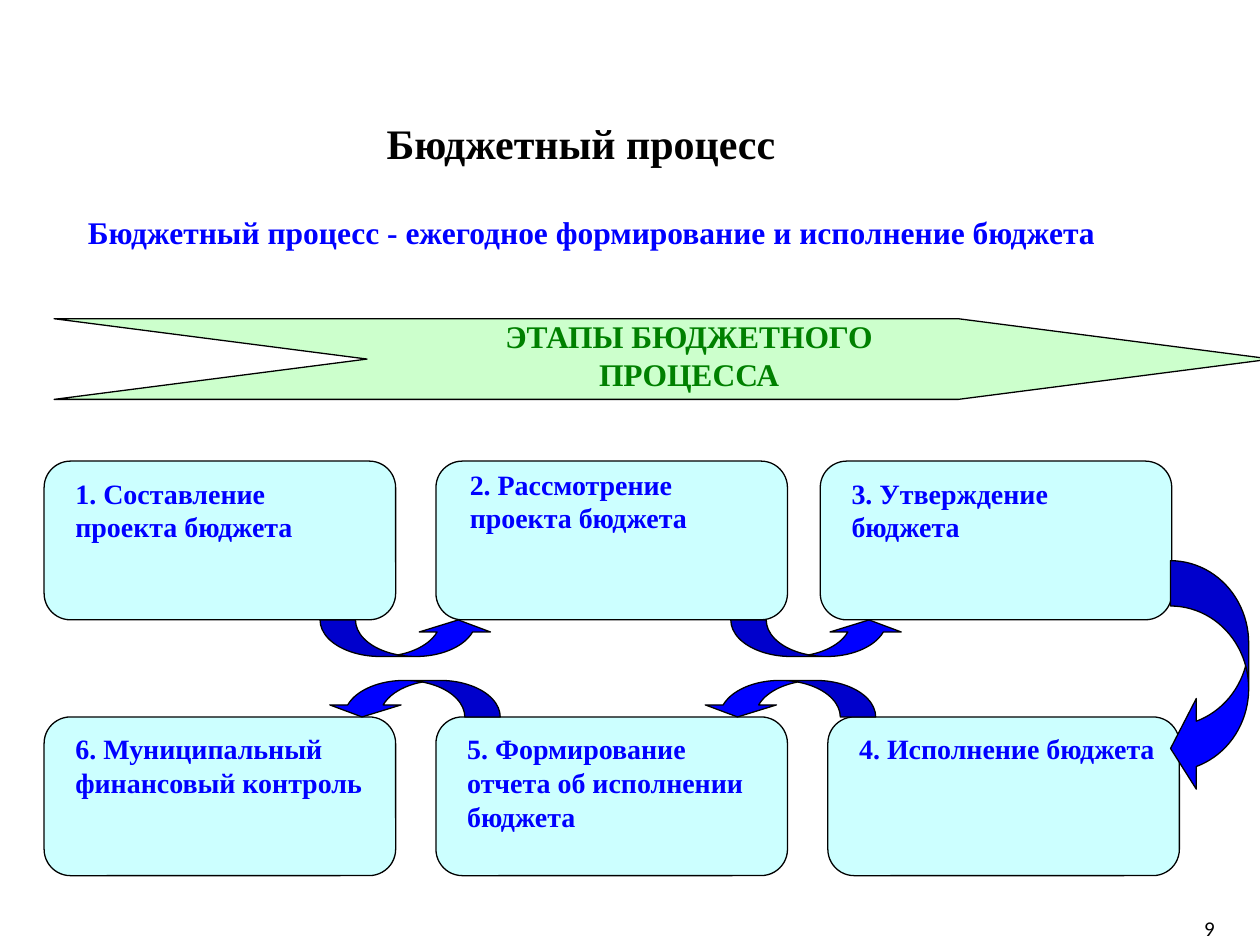
"""Build the slide on the stages of the budget process."""
from pptx import Presentation
from pptx.dml.color import RGBColor
from pptx.enum import shapes, text
from pptx.util import Inches, Pt

KIND = shapes.MSO_SHAPE
LEFT, MID, RIGHT = text.PP_ALIGN.LEFT, text.PP_ALIGN.CENTER, text.PP_ALIGN.RIGHT

THEME = {
    "serif": "Times New Roman", "sans": "Calibri",
    "black": "000000", "blue": "0000FF", "green": "008000",
    "mint": "CCFFCC", "cyan": "CCFFFF",
    "title": 24, "lead": 18, "step": 16, "page": 12, "line": 0.75,
}

TITLE = "Бюджетный процесс"
LEAD = "Бюджетный процесс - ежегодное формирование и исполнение бюджета"
BANNER = "ЭТАПЫ БЮДЖЕТНОГО ПРОЦЕССА"
PAGE = "9"

TOP, LOW = 3.66, 5.69
WIDE, HIGH = 2.79, 1.26
INSET = (0.15, 0.07)
STEPS = [
    ("1. Составление проекта бюджета", 0.35, TOP, INSET),
    ("2. Рассмотрение проекта бюджета", 3.46, TOP, (0.17, 0)),
    ("3. Утверждение бюджета", 6.51, TOP, INSET),
    ("4. Исполнение бюджета", 6.57, LOW, INSET),
    ("5. Формирование отчета об исполнении бюджета", 3.46, LOW, INSET),
    ("6. Муниципальный финансовый контроль", 0.35, LOW, INSET),
]

BEND = 0.29
ARROWS = [
    (2.54, TOP + HIGH, 0), (5.8, TOP + HIGH, 0),
    (5.57, LOW - BEND, 180), (2.59, LOW - BEND, 180),
]


def shade(name):
    return RGBColor.from_string(THEME[name])


def draw(slide, kind, box, fill, adj=(), turn=0):
    """Add an outlined preset shape."""
    item = slide.shapes.add_shape(kind, *map(Inches, box))
    for i, value in enumerate(adj):
        item.adjustments[i] = value
    item.rotation = turn
    item.shadow.inherit = False
    item.fill.solid()
    item.fill.fore_color.rgb = shade(fill)
    item.line.color.rgb = shade("black")
    item.line.width = Pt(THEME["line"])


def write(slide, words, box, size, color, face="serif", align=LEFT, bold=True):
    """Add a wrapped text box with one paragraph."""
    frame = slide.shapes.add_textbox(*map(Inches, box)).text_frame
    frame.word_wrap = True
    frame.text = words
    para = frame.paragraphs[0]
    para.alignment = align
    font = para.runs[0].font
    font.name, font.size, font.bold = THEME[face], Pt(THEME[size]), bold
    font.color.rgb = shade(color)
    return frame


def main():
    deck = Presentation()
    deck.slide_width, deck.slide_height = Inches(10), Inches(7.5)
    slide = deck.slides.add_slide(deck.slide_layouts[6])

    write(slide, TITLE, (2.97, 0.88, 5.12, 0.5), "title", "black")
    write(slide, LEAD, (0.6, 1.64, 9.56, 0.55), "lead", "blue")
    draw(slide, KIND.CHEVRON, (0.43, 2.53, 9.66, 0.64), "mint", [3.88])
    write(slide, BANNER, (3.3, 2.47, 4.34, 0.7), "lead", "green", align=MID)

    for words, x, y, (dx, dy) in STEPS:
        draw(slide, KIND.FLOWCHART_ALTERNATE_PROCESS, (x, y, WIDE, HIGH), "cyan")
        write(slide, words, (x + dx, y + dy, 2.55, 0.79), "step", "blue")

    for x, y, turn in ARROWS:
        draw(slide, KIND.CURVED_UP_ARROW, (x, y, 1.38, BEND), "blue",
             [0.97, 1.95, 0.33], turn)
    draw(slide, KIND.CURVED_LEFT_ARROW, (9.29, 4.45, 0.62, 1.85), "blue",
         [0.58, 1.16, 0.33])

    foot = write(slide, PAGE, (8.91, 7.23, 0.83, 0.27), "page", "black",
                 "sans", RIGHT, False)
    foot.vertical_anchor = text.MSO_ANCHOR.MIDDLE
    deck.save("out.pptx")


if __name__ == "__main__":
    main()
